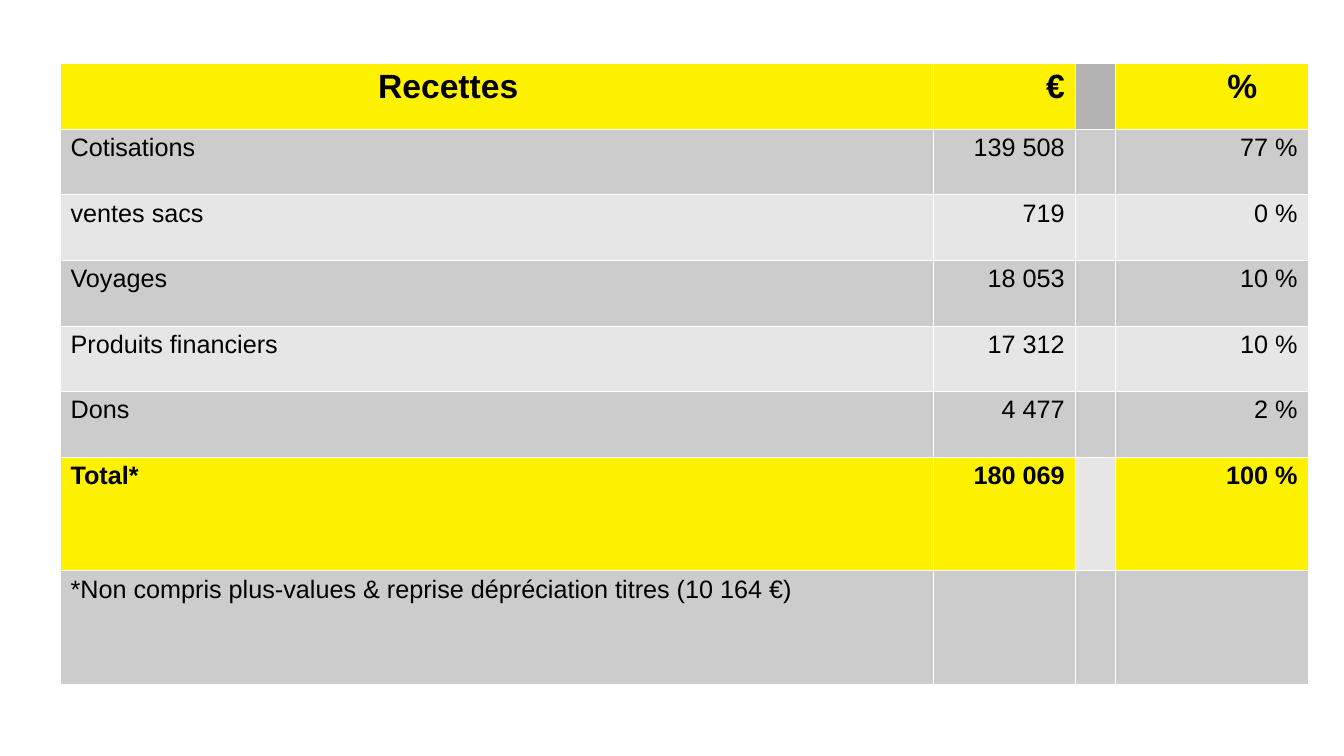
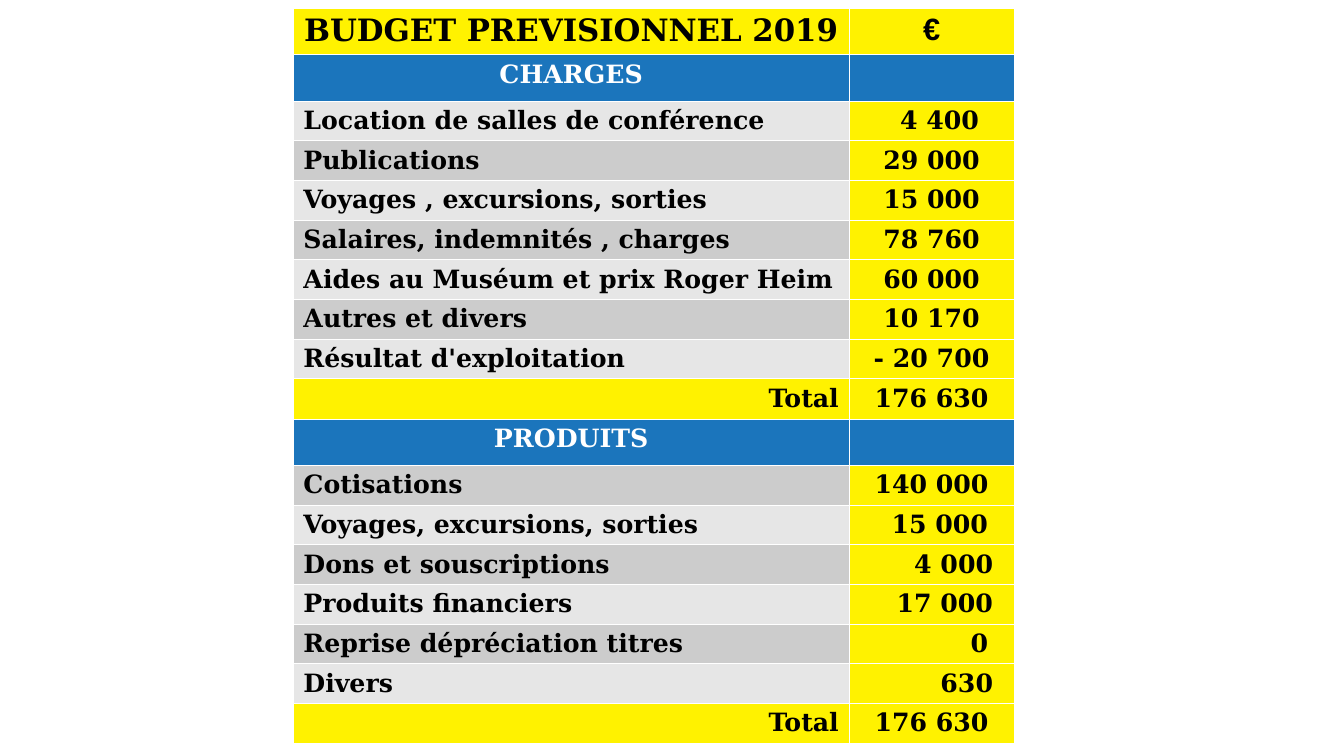
from dataclasses import dataclass

from lxml import etree
from pptx import Presentation
from pptx.dml.color import RGBColor
from pptx.enum.text import PP_ALIGN
from pptx.oxml.ns import qn
from pptx.util import Inches, Pt

LEFT, MID, RIGHT = PP_ALIGN.LEFT, PP_ALIGN.CENTER, PP_ALIGN.RIGHT
HEX = {
    "gold": "FFF200",
    "blue": "1B75BC",
    "dark": "B3B3B3",
    "odd": "CCCCCC",
    "even": "E6E6E6",
    "black": "000000",
    "white": "FFFFFF",
}
SANS, SERIF = "Arial", "DejaVu Serif"
PAD = 0.1


@dataclass(frozen=True)
class Look:
    font: str
    size: int
    bold: bool = True
    ink: str = "black"


@dataclass(frozen=True)
class Cell:
    """A table cell; without a fill it takes the band of its row."""
    text: str = ""
    look: Look = Look(SANS, 18, False)
    align: PP_ALIGN = LEFT
    fill: str = ""
    left: float = PAD
    right: float = PAD


@dataclass(frozen=True)
class Grid:
    left: float
    top: float
    cols: list[float]
    rows: list[tuple[float, list[Cell]]]


PLAIN = Look(SANS, 18, False)
BOLD = Look(SANS, 18)
HEAD = Look(SANS, 24)
BODY = Look(SERIF, 18)
BAR = Look(SERIF, 18, ink="white")
TITLE = Look(SERIF, 22)
EURO = Look(SANS, 22)

INCOME = [
    ("Cotisations", "139 508", "77 %"),
    ("ventes sacs", "719", "0 %"),
    ("Voyages", "18 053", "10 %"),
    ("Produits financiers", "17 312", "10 %"),
    ("Dons", "4 477", "2 %"),
]
# Label, amount and, for amounts set flush right, the right margin
COSTS = [
    ("Location de salles de conférence", "4 400", 0.35),
    ("Publications", "29 000", None),
    ("Voyages , excursions, sorties", "15 000", None),
    ("Salaires, indemnités , charges", "78 760", None),
    ("Aides au Muséum et prix Roger Heim", "60 000", None),
    ("Autres et divers", "10 170", None),
    ("Résultat d'exploitation", "- 20 700", None),
]
GAINS = [
    ("Cotisations", "140 000", None),
    ("Voyages, excursions, sorties", "15 000", 0.26),
    ("Dons et souscriptions", "4 000", 0.21),
    ("Produits financiers", "17 000", 0.21),
    ("Reprise dépréciation titres", "0", 0.26),
    ("Divers", "630", 0.21),
]


def rgb(name: str) -> RGBColor:
    return RGBColor.from_string(HEX[name])


def edge(cell) -> None:
    """Give the cell hairline white borders."""
    props = cell._tc.get_or_add_tcPr()
    for i, side in enumerate(("lnL", "lnR", "lnT", "lnB")):
        line = etree.Element(qn(f"a:{side}"), w=str(Pt(0.06)))
        fill = etree.SubElement(line, qn("a:solidFill"))
        etree.SubElement(fill, qn("a:srgbClr"), val=HEX["white"])
        props.insert(i, line)


def fill_cell(cell, data: Cell, band: str) -> None:
    cell.fill.solid()
    cell.fill.fore_color.rgb = rgb(data.fill or band)
    cell.margin_left, cell.margin_right = Inches(data.left), Inches(data.right)
    cell.margin_top = cell.margin_bottom = Inches(0.05)
    edge(cell)
    if not data.text:
        return
    para = cell.text_frame.paragraphs[0]
    para.alignment = data.align
    run = para.add_run()
    run.text = data.text
    font = run.font
    font.name, font.size = data.look.font, Pt(data.look.size)
    font.bold = data.look.bold
    font.color.rgb = rgb(data.look.ink)


def draw(deck, grid: Grid) -> None:
    """Add a blank slide that holds the grid as a table."""
    slide = deck.slides.add_slide(deck.slide_layouts[6])
    high = sum(height for height, _ in grid.rows)
    table = slide.shapes.add_table(
        len(grid.rows), len(grid.cols), Inches(grid.left), Inches(grid.top),
        Inches(sum(grid.cols)), Inches(high)).table
    table.first_row = table.horz_banding = False
    for col, width in zip(table.columns, grid.cols):
        col.width = Inches(width)
    for i, (height, cells) in enumerate(grid.rows):
        table.rows[i].height = Inches(height)
        for j, data in enumerate(cells):
            fill_cell(table.cell(i, j), data, "odd" if i % 2 else "even")


def income() -> Grid:
    head = [
        Cell("Recettes", HEAD, fill="gold", left=3.15),
        Cell("€", HEAD, RIGHT, "gold"),
        Cell(fill="dark"),
        Cell("%", HEAD, RIGHT, "gold", right=0.5),
    ]
    body = [
        (0.65, [Cell(name), Cell(sum_, PLAIN, RIGHT), Cell(),
                Cell(rate, PLAIN, RIGHT)])
        for name, sum_, rate in INCOME
    ]
    total = [
        Cell("Total*", BOLD, fill="gold"),
        Cell("180 069", BOLD, RIGHT, "gold"),
        Cell(),
        Cell("100 %", BOLD, RIGHT, "gold"),
    ]
    note = "*Non compris plus-values & reprise dépréciation titres (10 164 €)"
    last = [Cell(note), Cell(), Cell(), Cell()]
    rows = [(0.65, head), *body, (1.13, total), (1.13, last)]
    return Grid(0.6, 0.63, [8.65, 1.41, 0.4, 1.91], rows)


def part(title: str, items: list[tuple[str, str, float | None]],
         total: str) -> list[tuple[float, list[Cell]]]:
    """Build one budget section: bar, items and total."""
    rows = [(0.46, [Cell(title, BAR, MID, "blue"), Cell(fill="blue")])]
    for name, sum_, pad in items:
        if pad is None:
            value = Cell(sum_, BODY, MID, "gold")
        else:
            value = Cell(sum_, BODY, RIGHT, "gold", right=pad)
        rows.append((0.39, [Cell(name, BODY), value]))
    rows.append((0.4, [Cell("Total", BODY, RIGHT, "gold"),
                       Cell(total, BODY, MID, "gold")]))
    return rows


def budget() -> Grid:
    head = [Cell("BUDGET PREVISIONNEL 2019", TITLE, MID, "gold"),
            Cell("€", EURO, MID, "gold")]
    rows = [(0.43, head), *part("CHARGES", COSTS, "176 630"),
            *part("PRODUITS", GAINS, "176 630")]
    return Grid(2.91, 0.08, [5.51, 1.64], rows)


def main() -> None:
    deck = Presentation()
    deck.slide_width, deck.slide_height = Inches(13.33), Inches(7.5)
    for grid in (income(), budget()):
        draw(deck, grid)
    deck.save("out.pptx")


if __name__ == "__main__":
    main()
